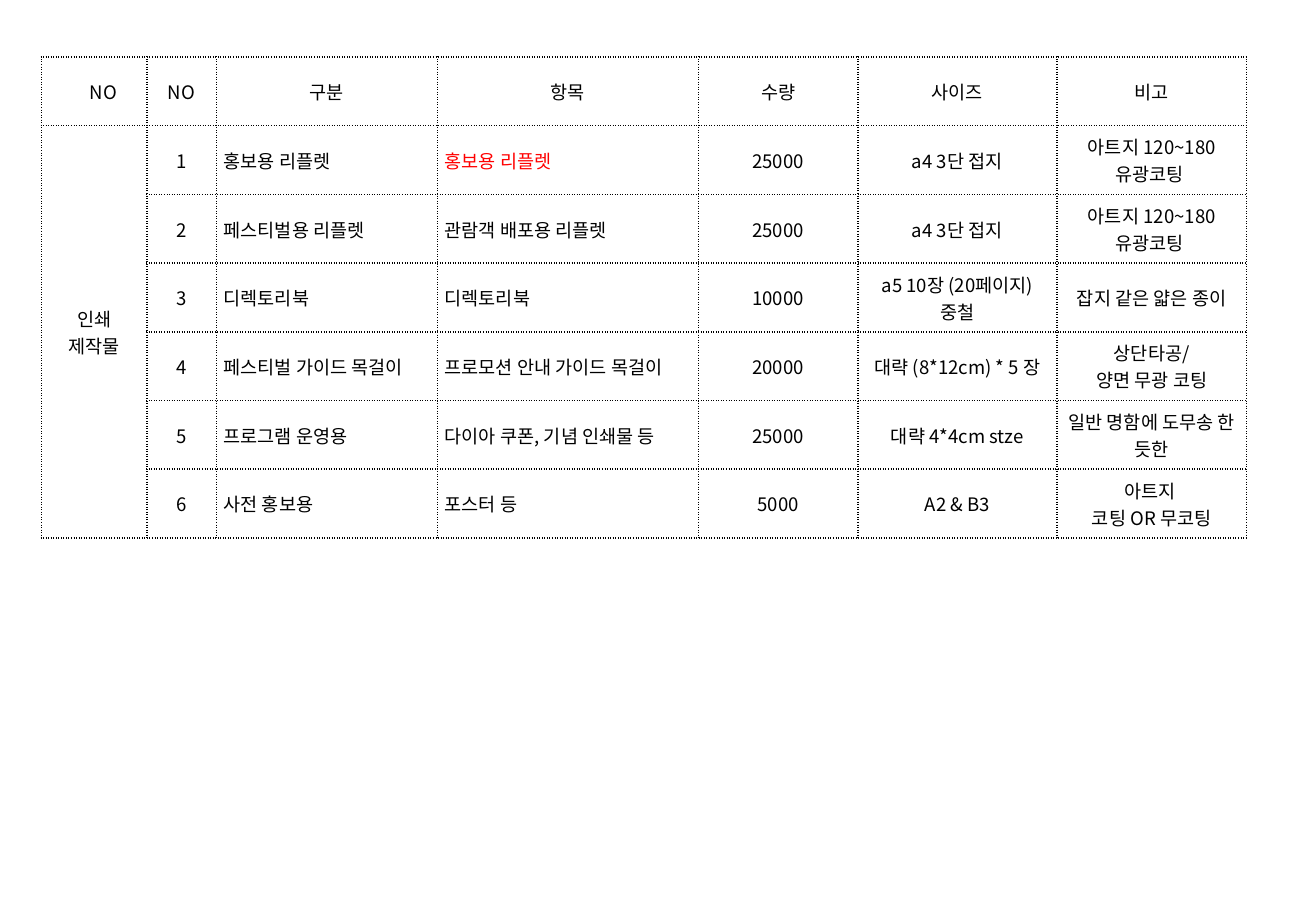
from dataclasses import dataclass

import pptx
import pptx.dml.color
import pptx.enum.text
import pptx.oxml
import pptx.oxml.ns
import pptx.util
from pptx.util import Inches


@dataclass(frozen=True)
class Theme:
    font: str = "Noto Sans CJK KR"
    size: float = 11
    ink: str = "000000"
    accent: str = "FF0000"
    paper: str = "FFFFFF"
    rule: float = 1
    inset: float = 0.06


THEME = Theme()
WIDTHS = [0.87, 0.57, 1.82, 2.15, 1.31, 1.64, 1.56]
HEIGHT = 3.96 / 7
HEADS = ["　NO", "NO", "구분", "항목", "수량", "사이즈", "비고"]
GROUP = "인쇄\n제작물"
ITEMS = [
    ["홍보용 리플렛", "홍보용 리플렛", "25000", "a4 3단 접지",
     "아트지 120~180\n유광코팅 "],
    ["페스티벌용 리플렛", "관람객 배포용 리플렛", "25000", "a4 3단 접지",
     "아트지 120~180\n유광코팅 "],
    ["디렉토리북", "디렉토리북", "10000", "a5 10장 (20페이지)\n중철",
     "잡지 같은 얇은 종이"],
    ["페스티벌 가이드 목걸이", "프로모션 안내 가이드 목걸이", "20000",
     "대략 (8*12cm) * 5 장", "상단타공/\n양면 무광 코팅"],
    ["프로그램 운영용", "다이아 쿠폰, 기념 인쇄물 등", "25000",
     "대략 4*4cm stze", "일반 명함에 도무송 한 듯한"],
    ["사전 홍보용", "포스터 등", "5000", "A2 & B3",
     "아트지 \n코팅 OR 무코팅"],
]
LEFT_COLS = (2, 3)
FILL_COLS = (1, 2, 3)


def rgb(code):
    return pptx.dml.color.RGBColor.from_string(code)


def add_run(para, text, color):
    run = para.add_run()
    run.text = text
    run.font.name = THEME.font
    run.font.size = pptx.util.Pt(THEME.size)
    run.font.color.rgb = rgb(color)
    east = pptx.oxml.parse_xml(
        f'<a:ea {pptx.oxml.ns.nsdecls("a")} typeface="{THEME.font}"/>')
    run.font._element.find(pptx.oxml.ns.qn("a:latin")).addnext(east)


def add_rules(cell):
    """Draw a dotted line on all four sides of a cell."""
    props = cell._tc.get_or_add_tcPr()
    width = pptx.util.Pt(THEME.rule)
    for side in ("lnL", "lnR", "lnT", "lnB"):
        props.append(pptx.oxml.parse_xml(
            f'<a:{side} {pptx.oxml.ns.nsdecls("a")} w="{width}">'
            f'<a:solidFill><a:srgbClr val="{THEME.ink}"/></a:solidFill>'
            f'<a:prstDash val="sysDot"/></a:{side}>'))


def set_cell(cell, text, color, align, filled):
    add_rules(cell)
    if filled:
        cell.fill.solid()
        cell.fill.fore_color.rgb = rgb(THEME.paper)
    else:
        cell.fill.background()
    inset = Inches(THEME.inset)
    cell.margin_left = cell.margin_right = inset
    cell.margin_top = cell.margin_bottom = inset
    cell.vertical_anchor = pptx.enum.text.MSO_ANCHOR.MIDDLE
    frame = cell.text_frame
    for i, line in enumerate(text.split("\n")):
        para = frame.add_paragraph() if i else frame.paragraphs[0]
        para.alignment = align
        if line:
            add_run(para, line, color)


def add_list(slide):
    """Add the table of printed items."""
    rows = [HEADS]
    for no, item in enumerate(ITEMS, 1):
        rows.append([GROUP if no == 1 else "", str(no), *item])
    table = slide.shapes.add_table(
        len(rows), len(WIDTHS), Inches(0.34), Inches(0.47),
        Inches(sum(WIDTHS)), Inches(HEIGHT * len(rows))).table
    table.first_row = table.horz_banding = False
    for col, width in zip(table.columns, WIDTHS):
        col.width = Inches(width)
    for row in table.rows:
        row.height = Inches(HEIGHT)
    table.cell(1, 0).merge(table.cell(len(ITEMS), 0))

    kinds = pptx.enum.text.PP_ALIGN
    for r, row in enumerate(rows):
        for c, text in enumerate(row):
            color = THEME.accent if (r, c) == (1, 3) else THEME.ink
            align = kinds.LEFT if r and c in LEFT_COLS else kinds.CENTER
            set_cell(table.cell(r, c), text, color, align,
                     r > 0 and c in FILL_COLS)


def main():
    deck = pptx.Presentation()
    deck.slide_width = Inches(10.83)
    deck.slide_height = Inches(7.5)
    add_list(deck.slides.add_slide(deck.slide_layouts[6]))
    deck.save("out.pptx")


if __name__ == "__main__":
    main()
